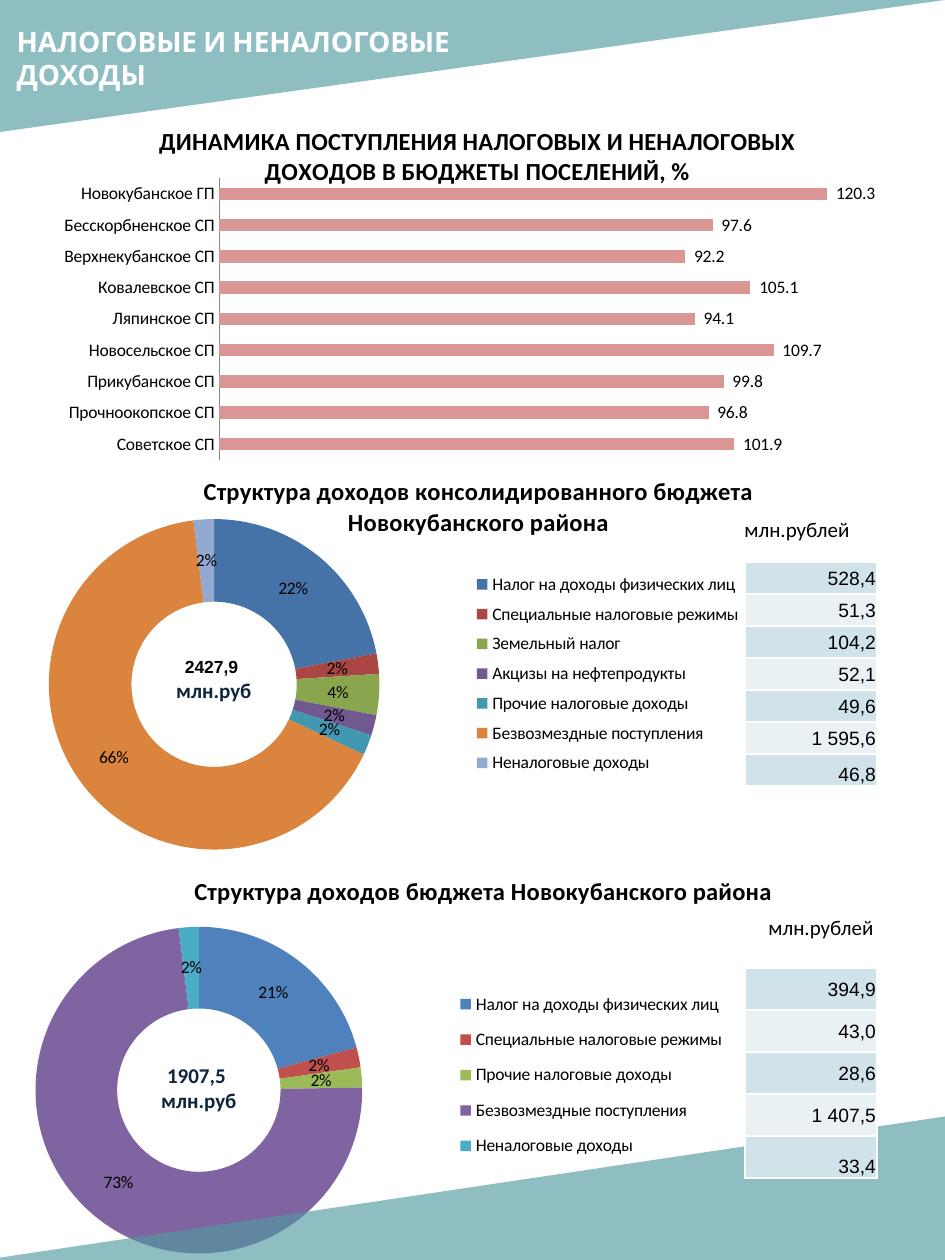
from lxml import etree
from pptx import Presentation
from pptx import util as u
from pptx.chart.data import CategoryChartData
from pptx.dml.color import RGBColor
from pptx.enum import chart as charts, shapes, text
from pptx.oxml import parse_xml
from pptx.oxml.ns import nsdecls, qn

COLORS = {"teal": "519AA0", "white": "FFFFFF", "black": "000000", "navy": "10243E",
          "bar": "D99694", "axis": "868686", "odd": "D0E3EA", "even": "E9F1F5"}
NUMBER_FORMAT = r"#\ ##0.0"


def box(*lengths):
    """Turn lengths in px (126 to the inch) into EMU."""
    return [round(length * 914400 / 126) for length in lengths]


def place(chart, part, x, y, w=None, h=None):
    """Give a chart part a manual layout, in fractions of the chart."""
    element = chart._chartSpace.chart.find(qn("c:" + part))
    for old in element.findall(qn("c:layout")):
        element.remove(old)
    tags = [("xMode", "edge"), ("yMode", "edge"), ("x", x), ("y", y)]
    if part == "plotArea":
        tags.insert(0, ("layoutTarget", "inner"))
    if w is not None:
        tags += [("w", w), ("h", h)]
    body = "".join(f'<c:{tag} val="{value}"/>' for tag, value in tags)
    layout = parse_xml(f'<c:layout {nsdecls("c")}><c:manualLayout>{body}</c:manualLayout></c:layout>')
    element.insert(0 if part == "plotArea" else 1, layout)


presentation = Presentation()
presentation.slide_width, presentation.slide_height = u.Inches(7.5), u.Inches(10)
slide = presentation.slides.add_slide(presentation.slide_layouts[5])

# Charts: the two rings lie under the corner triangles, the bars above them
income_tax, special, other = ("Налог на доходы физических лиц", "Специальные налоговые режимы",
                              "Прочие налоговые доходы")
grants, non_tax = "Безвозмездные поступления", "Неналоговые доходы"
ring, bars = charts.XL_CHART_TYPE.DOUGHNUT, charts.XL_CHART_TYPE.BAR_CLUSTERED
chart_specs = [
    (ring, (0, 840, 863, 420), "Структура доходов бюджета Новокубанского района",
     {income_tax: 21, special: 2, other: 2, grants: 74, non_tax: 2},
     ["4F81BD", "C0504D", "9BBB59", "8064A2", "4BACC6"],
     (0.22, 0.07), (0.041, 0.207, 0.379, 0.778), (0.52, 0.33, 0.33, 0.46)),
    (ring, (5, 449, 809, 420),
     "Структура доходов консолидированного бюджета Новокубанского района",
     {income_tax: 22, special: 2, "Земельный налог": 4, "Акцизы на нефтепродукты": 2,
      other: 2, grants: 66, non_tax: 2},
     ["4572A7", "AA4643", "89A54E", "71588F", "4198AF", "DB843D", "93A9CF"],
     (0.24, 0.05), (0.054, 0.167, 0.409, 0.787), (0.57, 0.275, 0.35, 0.52)),
    (bars, (5, 97, 936, 378),
     "ДИНАМИКА ПОСТУПЛЕНИЯ НАЛОГОВЫХ И НЕНАЛОГОВЫХ ДОХОДОВ В БЮДЖЕТЫ ПОСЕЛЕНИЙ, %",
     {"Новокубанское ГП": 120.3, "Бесскорбненское СП": 97.6, "Верхнекубанское СП": 92.2,
      "Ковалевское СП": 105.1, "Ляпинское СП": 94.1, "Новосельское СП": 109.7,
      "Прикубанское СП": 99.8, "Прочноокопское СП": 96.8, "Советское СП": 101.9},
     [COLORS["bar"]], (0.16, 0.06), (0.229, 0.215, 0.756, 0.745), None),
]
frames = []
for kind, area, heading, values, fills, title_at, plot_at, legend_at in chart_specs:
    data = CategoryChartData()
    data.categories = list(values)
    data.add_series("Доходы", list(values.values()))
    frame = slide.shapes.add_chart(kind, *box(*area), data)
    frames.append(frame)
    chart = frame.chart
    chart.font.size, chart.font.name = u.Pt(10), "Calibri"
    chart.font.color.rgb = RGBColor.from_string(COLORS["black"])
    chart.has_title = True
    paragraph = chart.chart_title.text_frame.paragraphs[0]
    paragraph.text = heading
    paragraph.font.size, paragraph.font.bold = u.Pt(14), True
    place(chart, "title", *title_at)
    place(chart, "plotArea", *plot_at)

    plot = chart.plots[0]
    series = plot.series[0]
    plot.has_data_labels = True
    labels = plot.data_labels
    labels.number_format_is_linked = False
    chart.has_legend = kind == ring
    if kind == ring:
        plot.vary_by_categories = True
        labels.number_format = "0%"
        labels.show_percentage, labels.show_value = True, False
        for index, color in enumerate(fills):
            fill = series.points[index].format.fill
            fill.solid()
            fill.fore_color.rgb = RGBColor.from_string(color)
        chart.legend.position = charts.XL_LEGEND_POSITION.RIGHT
        chart.legend.include_in_layout = False
        place(chart, "legend", *legend_at)
    else:
        plot.vary_by_categories = False
        plot.gap_width, plot.overlap = 150, -25
        labels.number_format = NUMBER_FORMAT
        labels.show_value = True
        labels.position = charts.XL_LABEL_POSITION.OUTSIDE_END
        series.format.fill.solid()
        series.format.fill.fore_color.rgb = RGBColor.from_string(fills[0])
        category_axis, value_axis = chart.category_axis, chart.value_axis
        category_axis.reverse_order = True
        category_axis.major_tick_mark = charts.XL_TICK_MARK.NONE
        category_axis.format.line.color.rgb = RGBColor.from_string(COLORS["axis"])
        value_axis.has_major_gridlines = False
        value_axis.minimum_scale, value_axis.maximum_scale = 0, 140
        value_axis.visible = False

# Corner triangles
for area, flip in [((0, 0, 945, 132), "flipV"), ((-16, 1116, 964, 144), "flipH")]:
    shape = slide.shapes.add_shape(shapes.MSO_SHAPE.RIGHT_TRIANGLE, *box(*area))
    shape._element.spPr.xfrm.set(flip, "1")
    shape.shadow.inherit = False
    shape.line.fill.background()
    shape.fill.solid()
    shape.fill.fore_color.rgb = RGBColor.from_string(COLORS["teal"])
    color = shape._element.spPr.find(".//" + qn("a:srgbClr"))
    etree.SubElement(color, qn("a:alpha")).set("val", "64000")

# Slide title, brought in front of the triangles with the bar chart
title = slide.shapes.title
title.left, title.top, title.width, title.height = box(4, 18, 568, 79)
title.text_frame.text = "НАЛОГОВЫЕ И НЕНАЛОГОВЫЕ ДОХОДЫ"
title.text_frame.vertical_anchor = text.MSO_ANCHOR.TOP
title.text_frame.auto_size = text.MSO_AUTO_SIZE.NONE
paragraph = title.text_frame.paragraphs[0]
paragraph.alignment = text.PP_ALIGN.LEFT
paragraph.font.size, paragraph.font.name, paragraph.font.bold = u.Pt(16), "Cabin", True
paragraph.font.color.rgb = RGBColor.from_string(COLORS["white"])
for front in (title, frames[-1]):
    slide.shapes._spTree.append(front._element)

# Ring totals and units: each line is text, size, font, colour
unit_line = (" млн.руб", 12, "Calibri", "navy")
column_head = ("млн.рублей", 12, "Calibri", "black")
for area, lines in [
    ((141, 1056, 111, 63), [("1907,5", 12, "Calibri", "navy"), unit_line]),
    ((156, 650, 111, 59), [("2427,9", 10, "Arial", "black"), unit_line]),
    ((732, 510, 130, 38), [column_head]),
    ((756, 908, 130, 38), [column_head]),
]:
    is_total = len(lines) == 2
    text_frame = slide.shapes.add_textbox(*box(*area)).text_frame
    text_frame.word_wrap = is_total
    for index, (words, size, font, color) in enumerate(lines):
        paragraph = text_frame.add_paragraph() if index else text_frame.paragraphs[0]
        paragraph.text = words
        paragraph.alignment = text.PP_ALIGN.CENTER if is_total else text.PP_ALIGN.LEFT
        paragraph.font.size, paragraph.font.name = u.Pt(size), font
        paragraph.font.bold = is_total
        paragraph.font.color.rgb = RGBColor.from_string(COLORS[color])

# Amounts beside the legends
for top, row_height, amounts in [
    (562, 32, ["528,4", "51,3", "104,2", "52,1", "49,6", "1 595,6", "46,8"]),
    (968, 42, ["394,9", "43,0", "28,6", "1 407,5", "33,4"]),
]:
    count = len(amounts)
    table = slide.shapes.add_table(count, 1, *box(745, top, 132, row_height * count)).table
    table.first_row = table.horz_banding = False
    for index, amount in enumerate(amounts):
        table.rows[index].height = box(row_height)[0]
        cell = table.cell(index, 0)
        cell.text = amount
        cell.margin_left, cell.margin_right, cell.margin_top, cell.margin_bottom = box(1, 1, 1, 0)
        is_last = index == count - 1
        cell.vertical_anchor = text.MSO_ANCHOR.BOTTOM if is_last else text.MSO_ANCHOR.MIDDLE
        paragraph = cell.text_frame.paragraphs[0]
        paragraph.alignment = text.PP_ALIGN.RIGHT
        paragraph.font.size, paragraph.font.name = u.Pt(11), "Arial"
        paragraph.font.color.rgb = RGBColor.from_string(COLORS["black"])
        for position, side in enumerate(("lnL", "lnR", "lnT", "lnB")):
            cell._tc.get_or_add_tcPr().insert(position, parse_xml(
                f'<a:{side} {nsdecls("a")} w="12700"><a:solidFill>'
                f'<a:srgbClr val="{COLORS["white"]}"/></a:solidFill></a:{side}>'))
        cell.fill.solid()
        cell.fill.fore_color.rgb = RGBColor.from_string(COLORS["even" if index % 2 else "odd"])

presentation.save("out.pptx")
